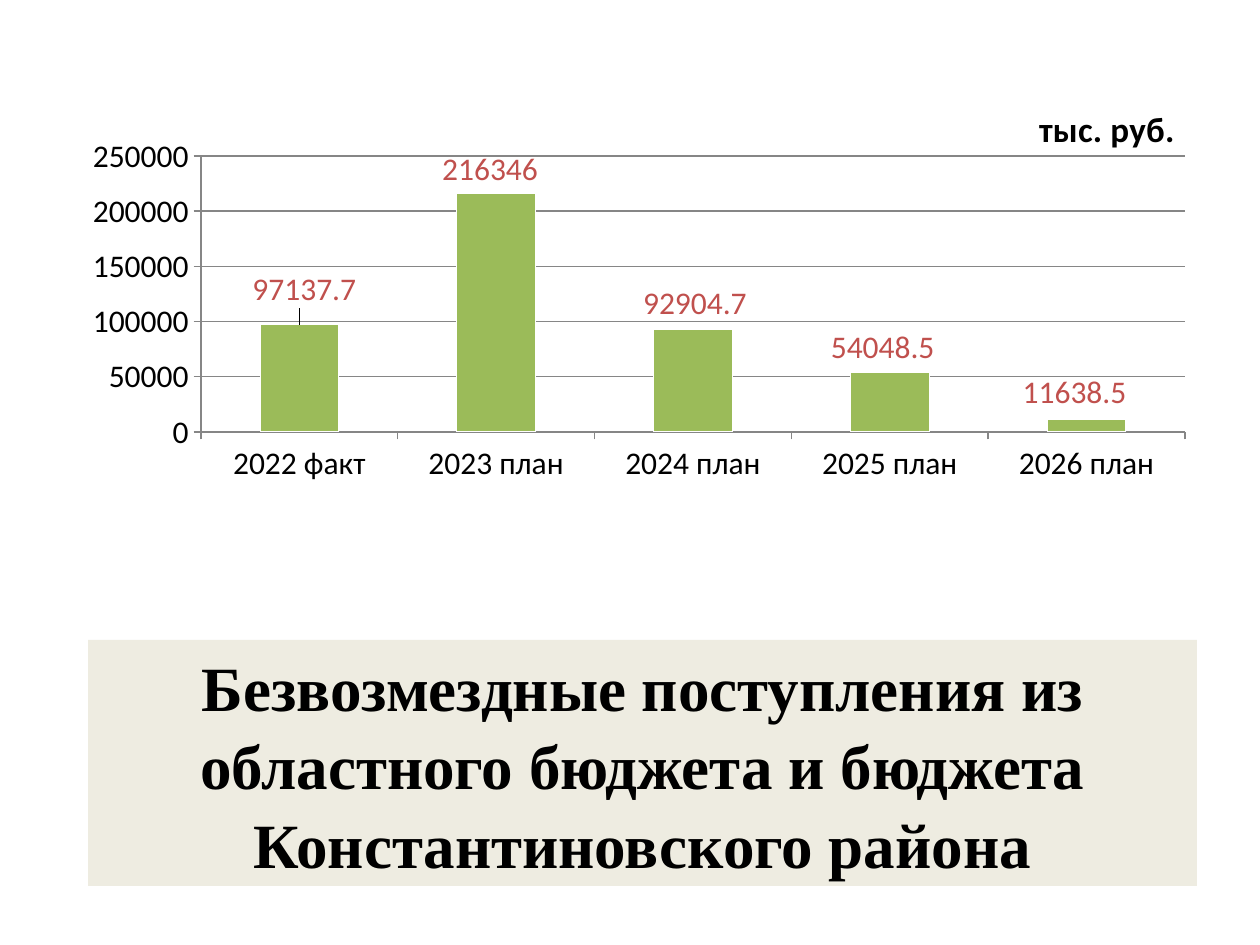
from dataclasses import dataclass

from lxml import etree
from pptx import Presentation
from pptx import util as u
from pptx.chart.data import CategoryChartData
from pptx.dml.color import RGBColor
from pptx.enum import chart as ch, text as tx
from pptx.oxml.ns import qn

PX = 914400 // 126


@dataclass(frozen=True)
class Theme:
    ink: RGBColor = RGBColor(0, 0, 0)
    panel: RGBColor = RGBColor(0xEE, 0xEC, 0xE1)
    bar: RGBColor = RGBColor(0x9B, 0xBB, 0x59)
    edge: RGBColor = RGBColor(0xFF, 0xFF, 0xFF)
    label: RGBColor = RGBColor(0xC0, 0x50, 0x4D)
    grid: RGBColor = RGBColor(0x86, 0x86, 0x86)
    serif: str = "Times New Roman"
    sans: str = "Calibri"
    head: int = 36
    unit: int = 20
    body: int = 18


@dataclass(frozen=True)
class Box:
    x: int
    y: int
    w: int
    h: int

    def emu(self) -> list[int]:
        return [v * PX for v in (self.x, self.y, self.w, self.h)]


@dataclass(frozen=True)
class Year:
    name: str
    sum: float
    dx: int  # label shift in px
    dy: int


THEME = Theme()
HEAD = Box(88, 640, 1109, 246)
CHART = Box(72, 63, 1119, 554)
PLOT = Box(201, 156, 984, 276)
UNIT = (1033, 98)
YEARS = [
    Year("2022 факт", 97137.7, 5, -11),
    Year("2023 план", 216346, -6, 0),
    Year("2024 план", 92904.7, 2, -2),
    Year("2025 план", 54048.5, -7, -1),
    Year("2026 план", 11638.5, -12, -3),
]


def style(font, size: int, color: RGBColor, name: str, bold: bool = False) -> None:
    font.size, font.name, font.bold = u.Pt(size), name, bold
    font.color.rgb = color


def place(layout, **marks) -> None:
    """Fill a chart layout element with manual marks, in schema order."""
    for old in list(layout):
        layout.remove(old)
    manual = etree.SubElement(layout, qn("c:manualLayout"))
    for key, val in marks.items():
        etree.SubElement(manual, qn(f"c:{key}")).set("val", str(val))


def ratio(x: int, y: int) -> dict[str, float]:
    return {"x": round(x / CHART.w, 4), "y": round(y / CHART.h, 4)}


def draw_head(slide) -> None:
    head = slide.shapes.title
    head.left, head.top, head.width, head.height = HEAD.emu()
    head.fill.solid()
    head.fill.fore_color.rgb = THEME.panel
    frame = head.text_frame
    frame.text = "Безвозмездные поступления из областного бюджета и бюджета Константиновского района"
    frame.word_wrap = True
    frame.auto_size = tx.MSO_AUTO_SIZE.NONE
    frame.vertical_anchor = tx.MSO_ANCHOR.MIDDLE
    para = frame.paragraphs[0]
    para.alignment = tx.PP_ALIGN.CENTER
    para.line_spacing = 1.04
    style(para.font, THEME.head, THEME.ink, THEME.serif, True)


def draw_unit(chart) -> None:
    title = chart.chart_title
    title.text_frame.text = "тыс. руб."
    style(title.text_frame.paragraphs[0].font, THEME.unit, THEME.ink, THEME.sans, True)
    node = title._element
    layout = node.find(qn("c:layout"))
    if layout is None:
        layout = etree.Element(qn("c:layout"))
        node.find(qn("c:tx")).addnext(layout)
    place(layout, xMode="edge", yMode="edge",
          **ratio(UNIT[0] - CHART.x, UNIT[1] - CHART.y))


def draw_axes(chart) -> None:
    for axis in (chart.category_axis, chart.value_axis):
        axis.format.line.color.rgb = THEME.grid
        axis.major_tick_mark = ch.XL_TICK_MARK.OUTSIDE
    rule = chart.value_axis
    rule.minimum_scale, rule.maximum_scale, rule.major_unit = 0, 250000, 50000
    rule.has_major_gridlines = True
    rule.major_gridlines.format.line.color.rgb = THEME.grid


def draw_bars(chart) -> None:
    plot = chart.plots[0]
    plot.gap_width = 150
    plot.vary_by_categories = False
    bars = plot.series[0]
    bars.format.fill.solid()
    bars.format.fill.fore_color.rgb = THEME.bar
    bars.format.line.color.rgb = THEME.edge
    for i, year in enumerate(YEARS):
        label = bars.points[i].data_label
        style(label.font, THEME.body, THEME.label, THEME.sans)
        label.position = ch.XL_LABEL_POSITION.OUTSIDE_END
    for node, year in zip(bars._element.iter(qn("c:dLbl")), YEARS):
        layout = etree.Element(qn("c:layout"))
        node.find(qn("c:idx")).addnext(layout)
        place(layout, **ratio(year.dx, year.dy))


def draw_chart(slide) -> None:
    data = CategoryChartData()
    data.categories = [year.name for year in YEARS]
    data.add_series("Series 1", [year.sum for year in YEARS])
    chart = slide.shapes.add_chart(
        ch.XL_CHART_TYPE.COLUMN_CLUSTERED, *CHART.emu(), data).chart
    style(chart.font, THEME.body, THEME.ink, THEME.sans)
    chart.has_legend = False
    draw_unit(chart)
    draw_axes(chart)
    draw_bars(chart)
    area = chart._chartSpace.find(f".//{qn('c:plotArea')}")
    layout = area.find(qn("c:layout"))
    if layout is None:
        layout = etree.Element(qn("c:layout"))
        area.insert(0, layout)
    place(layout, layoutTarget="inner", xMode="edge", yMode="edge",
          **ratio(PLOT.x - CHART.x, PLOT.y - CHART.y),
          w=round(PLOT.w / CHART.w, 4), h=round(PLOT.h / CHART.h, 4))


def main() -> None:
    deck = Presentation()
    deck.slide_width, deck.slide_height = u.Inches(10), u.Inches(7.5)
    slide = deck.slides.add_slide(deck.slide_layouts.get_by_name("Title Only"))
    draw_head(slide)
    draw_chart(slide)
    deck.save("out.pptx")


if __name__ == "__main__":
    main()
